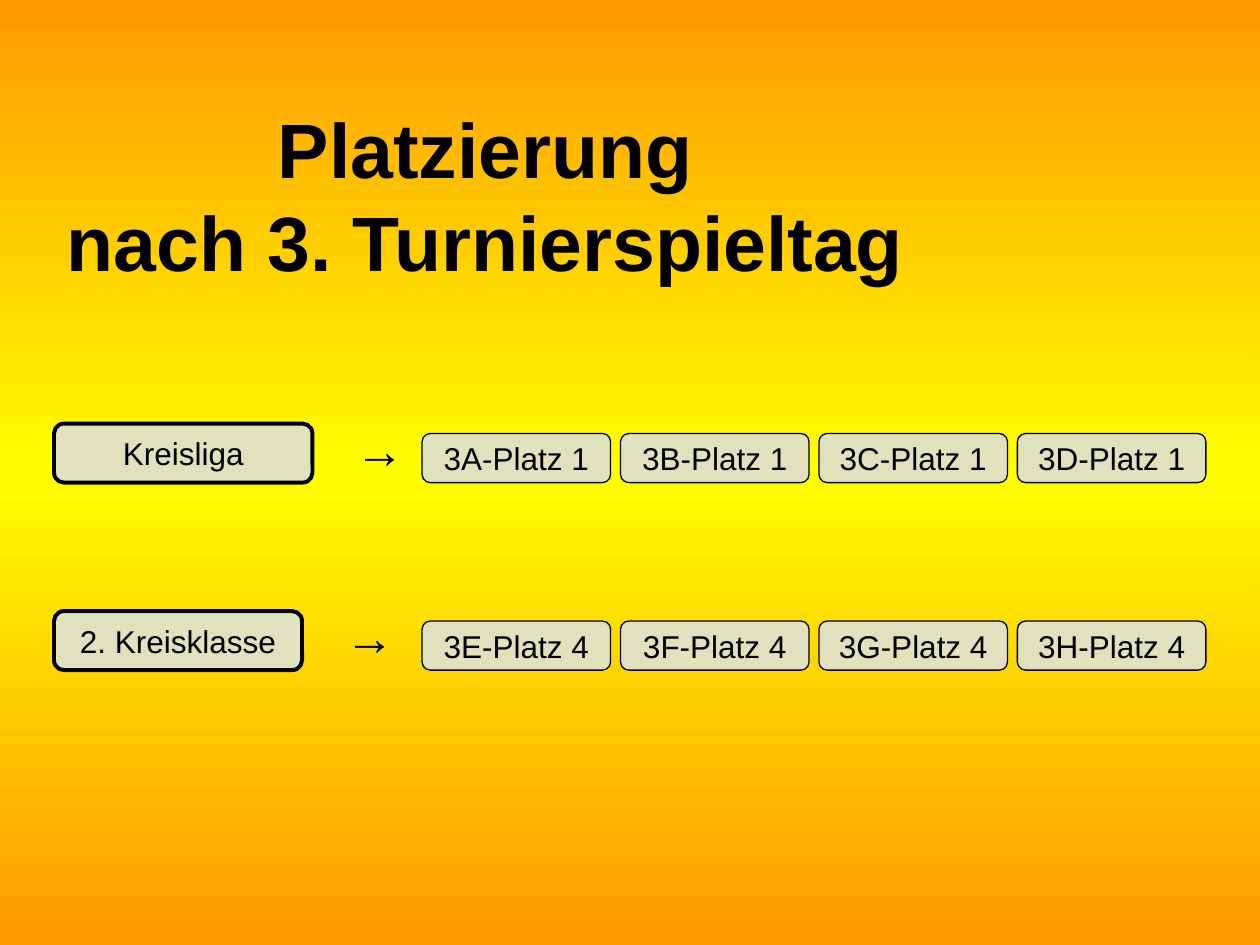
"""Build the placement slide for the third tournament day."""
from copy import deepcopy
from dataclasses import dataclass

from pptx import Presentation
from pptx.dml.color import RGBColor
from pptx.enum.shapes import MSO_SHAPE
from pptx.enum.text import MSO_ANCHOR, PP_ALIGN
from pptx.oxml.ns import qn
from pptx.util import Cm, Pt

ROUNDED = MSO_SHAPE.FLOWCHART_ALTERNATE_PROCESS
MIDDLE, TOP = MSO_ANCHOR.MIDDLE, MSO_ANCHOR.TOP
CENTER, LEFT = PP_ALIGN.CENTER, PP_ALIGN.LEFT


@dataclass(frozen=True)
class Theme:
    font: str = "Arial"
    ink: str = "000000"
    box_fill: str = "DFE2BC"
    backdrop: tuple = ("FF9900", "FFFF00", "FF9900")
    title_size: float = 44
    label_size: float = 18
    arrow_size: float = 28
    league_line: float = 2.25
    place_line: float = 0.75


THEME = Theme()
TITLE = ["Platzierung", "nach 3. Turnierspieltag"]
ARROW = "→"
LEAGUES = [
    {"name": "Kreisliga", "width": 5.21, "arrow_left": 6.91,
     "places": ["3A-Platz 1", "3B-Platz 1", "3C-Platz 1", "3D-Platz 1"]},
    {"name": "2. Kreisklasse", "width": 5.0, "arrow_left": 6.71,
     "places": ["3E-Platz 4", "3F-Platz 4", "3G-Platz 4", "3H-Platz 4"]},
]
ROW_BOTTOM, ROW_STEP = 9.73, 3.78
LEAGUE_LEFT, LEAGUE_HEIGHT = 1.09, 1.19
PLACE_LEFT, PLACE_STEP = 8.51, 4.0
PLACE_WIDTH, PLACE_HEIGHT = 3.8, 0.99
ARROW_RISE, ARROW_WIDTH, ARROW_HEIGHT = 1.4, 0.99, 1.45


def paint_background(page):
    fill = page.background.fill
    fill.gradient()
    fill.gradient_angle = 90
    stop_list = page.element.find(".//" + qn("a:gsLst"))
    stop_list.append(deepcopy(stop_list[-1]))
    for index, stop in enumerate(fill.gradient_stops):
        stop.position = index / (len(THEME.backdrop) - 1)
        stop.color.rgb = RGBColor.from_string(THEME.backdrop[index])


def write(box, lines, size, align=CENTER, anchor=MIDDLE, bold=False, wrap=True):
    frame = box.text_frame
    frame.word_wrap = wrap
    frame.vertical_anchor = anchor
    for index, line in enumerate(lines):
        para = frame.add_paragraph() if index else frame.paragraphs[0]
        para.alignment = align
        span = para.add_run()
        span.text = line
        span.font.name = THEME.font
        span.font.size = Pt(size)
        span.font.bold = bold
        span.font.color.rgb = RGBColor.from_string(THEME.ink)


def add_text(page, area, lines, size, **style):
    box = page.shapes.add_textbox(*map(Cm, area))
    write(box, lines, size, **style)


def add_label(page, area, label, line_width):
    box = page.shapes.add_shape(ROUNDED, *map(Cm, area))
    box.shadow.inherit = False
    box.fill.solid()
    box.fill.fore_color.rgb = RGBColor.from_string(THEME.box_fill)
    box.line.color.rgb = RGBColor.from_string(THEME.ink)
    box.line.width = Pt(line_width)
    write(box, [label], THEME.label_size, wrap=False)


def add_league(page, league, bottom):
    area = (LEAGUE_LEFT, bottom - LEAGUE_HEIGHT, league["width"], LEAGUE_HEIGHT)
    add_label(page, area, league["name"], THEME.league_line)
    area = (league["arrow_left"], bottom - ARROW_RISE, ARROW_WIDTH, ARROW_HEIGHT)
    add_text(page, area, [ARROW], THEME.arrow_size, align=LEFT, anchor=TOP)
    for column, place in enumerate(league["places"]):
        left = PLACE_LEFT + column * PLACE_STEP
        area = (left, bottom - PLACE_HEIGHT, PLACE_WIDTH, PLACE_HEIGHT)
        add_label(page, area, place, THEME.place_line)


def main():
    deck = Presentation()
    deck.slide_width, deck.slide_height = Cm(25.4), Cm(19.05)
    page = deck.slides.add_slide(deck.slide_layouts[6])
    paint_background(page)
    add_text(page, (0.99, 2.01, 17.6, 3.81), TITLE, THEME.title_size, bold=True)
    for row, league in enumerate(LEAGUES):
        add_league(page, league, ROW_BOTTOM + row * ROW_STEP)
    deck.save("out.pptx")


if __name__ == "__main__":
    main()
